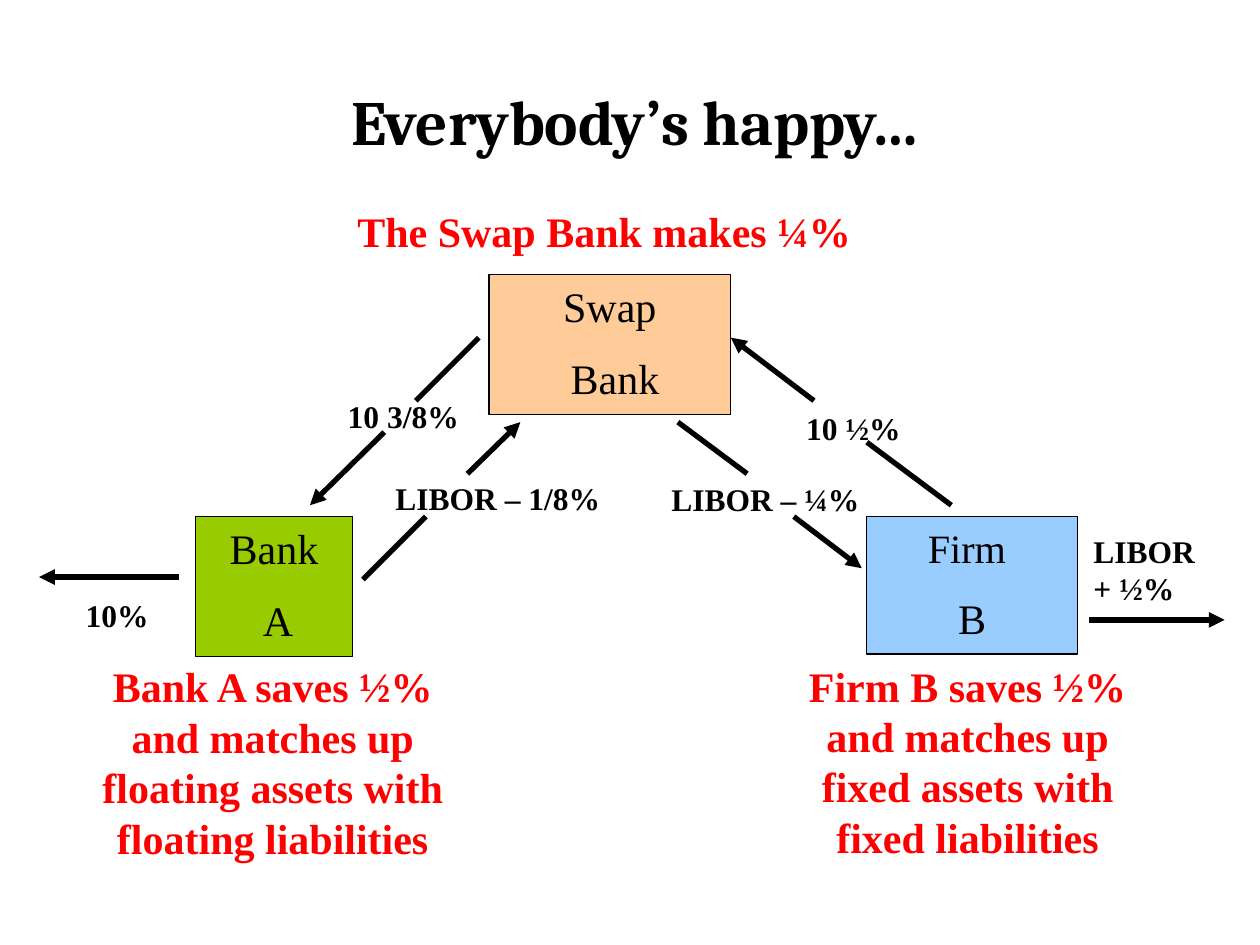
from lxml import etree
from pptx import Presentation
from pptx.dml.color import RGBColor
from pptx.enum.shapes import MSO_CONNECTOR, MSO_SHAPE
from pptx.enum.text import MSO_ANCHOR, PP_ALIGN
from pptx.oxml.ns import qn
from pptx.util import Inches, Pt

LEFT, MID, RIGHT = PP_ALIGN.LEFT, PP_ALIGN.CENTER, PP_ALIGN.RIGHT


def color(code):
    return RGBColor.from_string(code)


def place(box):
    return [Inches(n) for n in box]


def write(frame, text, size=18, font="Times New Roman", ink="000000",
          bold=True, align=LEFT, anchor=MSO_ANCHOR.TOP, inset=0.1):
    """Fill a frame, one paragraph per line of text."""
    frame.word_wrap = True
    frame.vertical_anchor = anchor
    frame.margin_left = frame.margin_right = Inches(inset)
    frame.margin_top = frame.margin_bottom = Inches(inset / 2)
    for i, line in enumerate(text.split("\n")):
        para = frame.add_paragraph() if i else frame.paragraphs[0]
        para.alignment = align
        para.space_before = Pt(size / 2 if i else 0)
        run = para.add_run()
        run.text = line
        run.font.name = font
        run.font.size = Pt(size)
        run.font.bold = bold
        run.font.color.rgb = color(ink)


class Board:
    """The current slide and its shared style."""
    ink = "000000"
    accent = "FF0000"

    def __init__(self, slide):
        self.slide = slide
        self.shapes = slide.shapes

    def title(self, text, box):
        shape = self.shapes.title
        shape.left, shape.top, shape.width, shape.height = place(box)
        write(shape.text_frame, text, size=36, font="Cambria", align=MID,
              anchor=MSO_ANCHOR.MIDDLE)

    def party(self, text, box, fill):
        shape = self.shapes.add_shape(MSO_SHAPE.RECTANGLE, *place(box))
        shape.shadow.inherit = False
        shape.fill.solid()
        shape.fill.fore_color.rgb = color(fill)
        shape.line.color.rgb = color(self.ink)
        shape.line.width = Pt(0.75)
        write(shape.text_frame, text, size=24, bold=False, align=MID)
        return shape

    def label(self, text, box, **form):
        shape = self.shapes.add_textbox(*place(box))
        write(shape.text_frame, text, **form)
        return shape

    def gain(self, text, box, inset=0.11):
        self.label(text, box, size=24, ink=self.accent, align=MID, inset=inset)

    def line(self, start, end, head=False):
        link = self.shapes.add_connector(
            MSO_CONNECTOR.STRAIGHT, *place(start + end))
        link.line.color.rgb = color(self.ink)
        link.line.width = Pt(3)
        props = link._element.spPr
        if head:
            etree.SubElement(props.find(qn("a:ln")), qn("a:tailEnd"),
                             type="triangle")
        etree.SubElement(props, qn("a:effectLst"))


def main():
    deck = Presentation()
    deck.slide_width, deck.slide_height = Inches(10), Inches(7.5)
    board = Board(deck.slides.add_slide(deck.slide_layouts[5]))

    board.title("Everybody’s happy…", (0.67, 0.33, 8.75, 1.25))

    board.party("Swap\n Bank", (3.88, 2.18, 1.92, 1.11), "FFCC99")
    firm = board.party("Firm \nB", (6.88, 4.1, 1.67, 1.09), "99CCFF")
    firm.text_frame.paragraphs[0].runs[0].font.size = Pt(23)
    board.party("Bank\n A", (1.55, 4.1, 1.25, 1.11), "99CC00")

    # Each flow is a plain line, its rate, then an arrow.
    flows = [
        ((7.55, 4.01), (6.88, 3.51), (6.46, 3.18), (5.8, 2.68),
         "10 ½%", (6.3, 3.2, 1.08, 0.4), LEFT),
        ((5.38, 3.35), (5.93, 3.76), (6.3, 4.1), (6.84, 4.51),
         "LIBOR – ¼%", (5.05, 3.76, 1.87, 0.4), RIGHT),
        ((2.88, 4.6), (3.38, 4.1), (3.71, 3.76), (4.13, 3.35),
         "LIBOR – 1/8%", (3.04, 3.75, 2.01, 0.4), LEFT),
        ((3.8, 2.68), (3.3, 3.18), (3.05, 3.43), (2.46, 4.01),
         "10 3/8%", (2.63, 3.1, 1.11, 0.4), RIGHT),
    ]
    for start, stop, leave, end, rate, box, align in flows:
        board.line(leave, end, head=True)
        board.label(rate, box, align=align)
        board.line(start, stop)

    board.gain("Firm B saves ½% and matches up fixed assets with "
               "fixed liabilities", (6.11, 5.19, 3.14, 1.72), inset=0.1)
    board.gain("Bank A saves ½% and matches up floating assets with "
               "floating liabilities", (0.58, 5.19, 3.17, 1.73))
    board.gain("The Swap Bank makes ¼%", (2.71, 1.58, 4.17, 0.51))

    board.line((1.42, 4.58), (0.31, 4.58), head=True)
    cost = board.label("10%", (0.56, 4.68, 0.74, 0.4), align=MID)
    cost.fill.solid()
    cost.fill.fore_color.rgb = color("FFFFFF")
    board.line((8.64, 4.92), (9.72, 4.92), head=True)
    board.label("LIBOR + ½%", (8.58, 4.17, 1.02, 0.7))

    deck.save("out.pptx")


if __name__ == "__main__":
    main()
